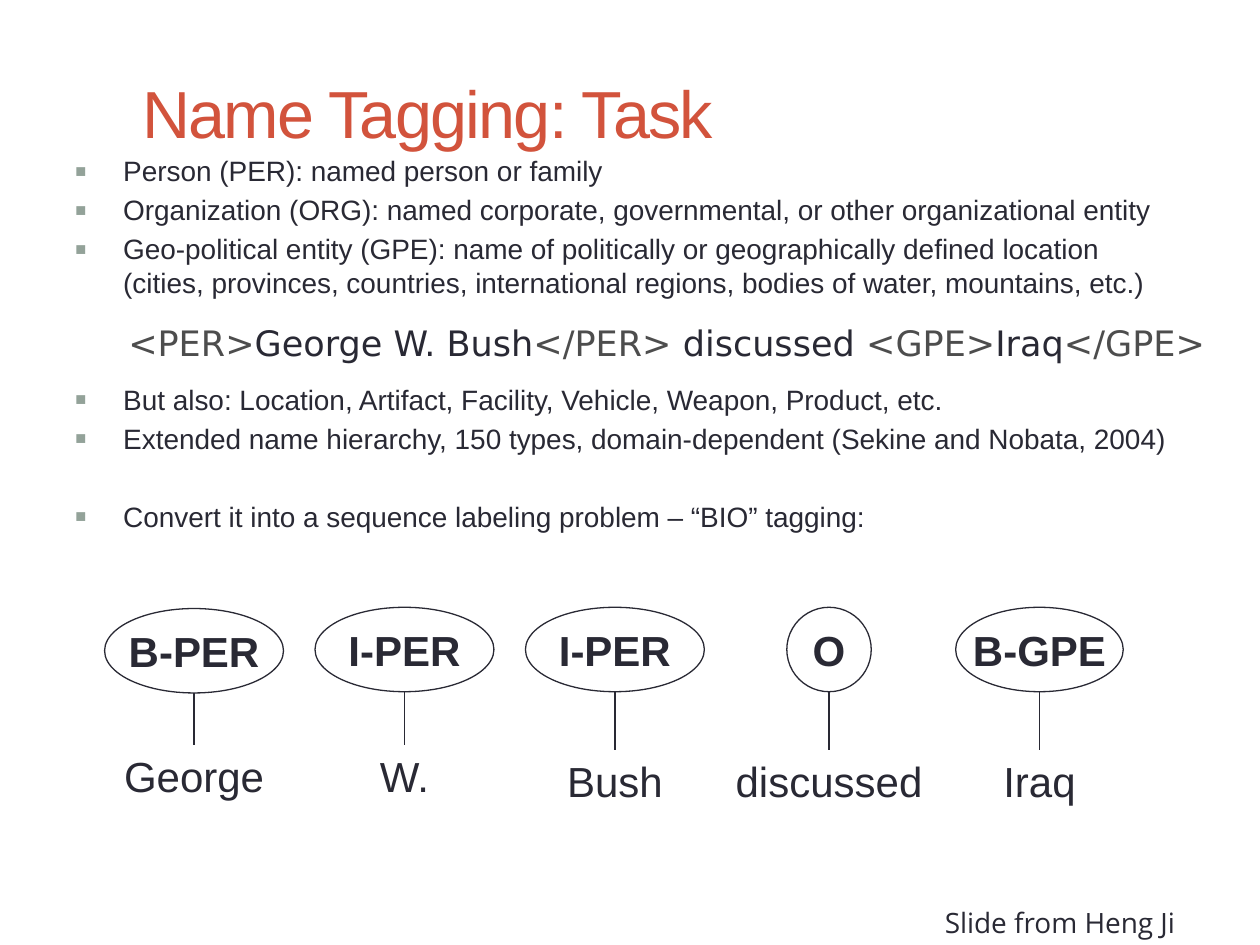
import pptx
import pptx.util
import pptx.dml.color
import pptx.enum.shapes
import pptx.enum.text
import pptx.oxml
import pptx.oxml.ns
import lxml.etree

Inches = pptx.util.Inches
Pt = pptx.util.Pt
ALIGN = pptx.enum.text.PP_ALIGN
ANCHOR = pptx.enum.text.MSO_ANCHOR
COLORS = {"ink": "292934", "title": "D2533C", "tag": "4D4D4D", "bullet": "93A299"}


def rgb(name):
    return pptx.dml.color.RGBColor.from_string(COLORS[name])


class TaggingPage:
    font = "Arial"
    line_pitch = 19.4
    paragraph_gap = 2.9

    def __init__(self, deck):
        self.page = deck.slides.add_slide(deck.slide_layouts[6])

    def style(self, span, size, color="ink", font=None, bold=False):
        span.font.name = font or self.font
        span.font.size = Pt(size)
        span.font.bold = bold
        span.font.color.rgb = rgb(color)

    def text(self, place, words, size, color="ink", font=None,
             align=ALIGN.LEFT, anchor=ANCHOR.TOP, wrap=True):
        box = self.page.shapes.add_textbox(*map(Inches, place))
        frame = box.text_frame
        frame.word_wrap = wrap
        frame.vertical_anchor = anchor
        frame.text = words
        para = frame.paragraphs[0]
        para.alignment = align
        self.style(para.runs[0], size, color, font)
        return box

    def title(self, place, words):
        box = self.text(place, words, 38, "title", anchor=ANCHOR.MIDDLE)
        span = box.text_frame.paragraphs[0].runs[0]
        span.font._element.set("spc", "-100")

    def tagged_sentence(self, place, parts):
        box = self.page.shapes.add_textbox(*map(Inches, place))
        box.text_frame.word_wrap = False
        para = box.text_frame.paragraphs[0]
        for words in parts:
            span = para.add_run()
            span.text = words
            color = "tag" if words.startswith("<") else "ink"
            self.style(span, 20, color, "DejaVu Sans")

    def bullets(self, place, items):
        box = self.page.shapes.add_textbox(*map(Inches, place))
        frame = box.text_frame
        frame.word_wrap = True
        frame.text = "\n".join(words for words, _ in items)
        for para, (_, skipped_lines) in zip(frame.paragraphs, items):
            pitch = self.line_pitch + self.paragraph_gap
            para.line_spacing = Pt(self.line_pitch)
            para.space_before = Pt(self.paragraph_gap + skipped_lines * pitch)
            self.style(para.runs[0], 16)
            self.bullet_mark(para)

    def bullet_mark(self, para):
        properties = para._p.get_or_add_pPr()
        properties.set("marL", str(Inches(0.38)))
        properties.set("indent", str(-Inches(0.38)))
        namespace = pptx.oxml.ns.nsdecls("a")
        for markup in (
            f'<a:buClr {namespace}><a:srgbClr val="{COLORS["bullet"]}"/></a:buClr>',
            f'<a:buSzPct {namespace} val="65000"/>',
            f'<a:buFont {namespace} typeface="Arial"/>',
            f'<a:buChar {namespace} char="■"/>',
        ):
            properties.append(pptx.oxml.parse_xml(markup))

    def ellipse(self, place, words):
        shape = self.page.shapes.add_shape(
            pptx.enum.shapes.MSO_SHAPE.OVAL, *map(Inches, place))
        shape.shadow.inherit = False
        shape.fill.background()
        shape.line.color.rgb = rgb("ink")
        shape.line.width = Pt(0.75)
        frame = shape.text_frame
        frame.word_wrap = False
        frame.vertical_anchor = ANCHOR.MIDDLE
        frame.text = words
        para = frame.paragraphs[0]
        para.alignment = ALIGN.CENTER
        self.style(para.runs[0], 24, bold=True)

    def stem(self, center, top, label):
        line = self.page.shapes.add_connector(
            pptx.enum.shapes.MSO_CONNECTOR.STRAIGHT,
            Inches(center), Inches(top), Inches(center), label.top)
        line.end_connect(label, 0)
        line.line.color.rgb = rgb("ink")
        line.line.width = Pt(0.75)
        lxml.etree.SubElement(
            line._element.spPr, pptx.oxml.ns.qn("a:effectLst"))

    def token(self, center, tag, tag_width, tag_top, word, word_width, word_top):
        height = 0.67
        label = self.text((center - word_width / 2, word_top, word_width, 0.5),
                          word, 24, align=ALIGN.CENTER)
        self.ellipse((center - tag_width / 2, tag_top, tag_width, height), tag)
        self.stem(center, tag_top + height, label)


def main():
    deck = pptx.Presentation()
    deck.slide_width = Inches(10)
    deck.slide_height = Inches(7.5)
    page = TaggingPage(deck)

    for token in (
        (1.54, "B-PER", 1.42, 4.83, "George", 1.42, 5.91),
        (3.21, "I-PER", 1.42, 4.82, "W.", 0.75, 5.91),
        (4.88, "I-PER", 1.42, 4.82, "Bush", 1.08, 5.95),
        (6.58, "O", 0.67, 4.82, "discussed", 1.83, 5.95),
        (8.25, "B-GPE", 1.33, 4.82, "Iraq", 1, 5.95),
    ):
        page.token(*token)

    page.tagged_sentence((0.92, 2.5, 8.83, 0.43), (
        "<PER>", "George W. Bush", "</PER>", " discussed ",
        "<GPE>", "Iraq", "</GPE>"))
    page.title((1.03, 0.26, 9, 1.25), "Name Tagging: Task")
    page.bullets((0.5, 1.17, 9, 4.95), (
        ("Person (PER): named person or family", 0),
        ("Organization (ORG): named corporate, governmental, or other "
         "organizational entity", 0),
        ("Geo-political entity (GPE): name of politically or geographically "
         "defined location (cities, provinces, countries, international "
         "regions, bodies of water, mountains, etc.)", 0),
        ("But also: Location, Artifact, Facility, Vehicle, Weapon, Product, "
         "etc.", 2),
        ("Extended name hierarchy, 150 types, domain-dependent (Sekine and "
         "Nobata, 2004)", 0),
        ("Convert it into a sequence labeling problem – “BIO” tagging:", 1),
    ))
    page.text((7.4, 7.14, 2.16, 0.37), "Slide from Heng Ji", 16,
              font="Open Sans", wrap=False)
    deck.save("out.pptx")


if __name__ == "__main__":
    main()
